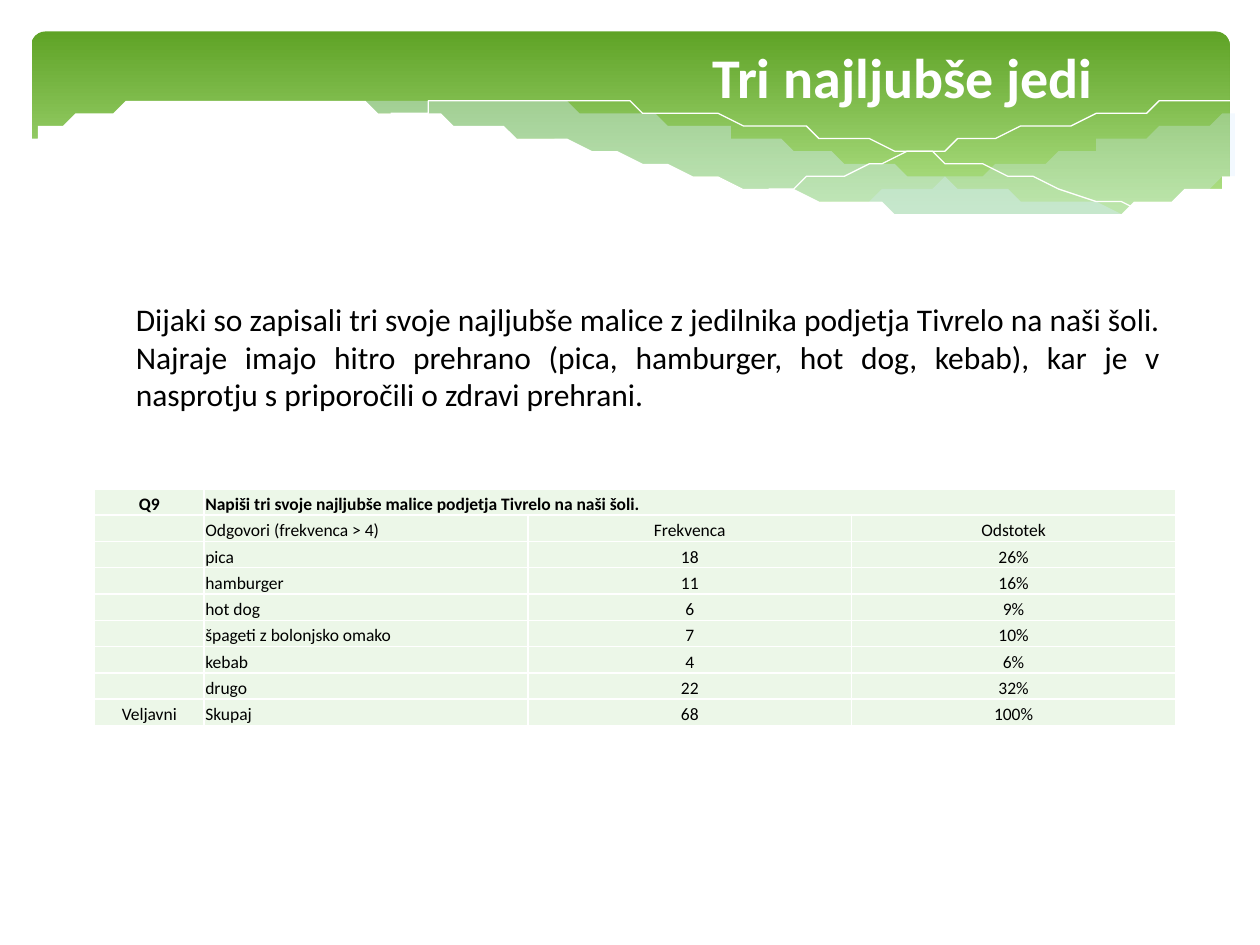
from lxml.etree import SubElement
from pptx import Presentation
from pptx.dml.color import RGBColor
from pptx.enum.shapes import MSO_SHAPE as Shape
from pptx.enum.text import MSO_ANCHOR as Anchor, MSO_AUTO_SIZE as AutoSize, PP_ALIGN as Align
from pptx.oxml.ns import qn
from pptx.util import Inches, Pt

WHITE = RGBColor(0xFF, 0xFF, 0xFF)
BLACK = RGBColor(0, 0, 0)
GREEN = RGBColor(0x5F, 0xA3, 0x26)
LIME = RGBColor(0xB2, 0xE3, 0x89)
VEIL = RGBColor(0xD6, 0xEC, 0xFF)
CELL_FILL = RGBColor(0xEC, 0xF7, 0xE8)

# The slide is a grid of 100 columns by 75 rows of square units
UNIT = Inches(0.1)
COLS, ROWS = 100, 75

# Veils: each is a list of edges, and each edge is a smooth curve
VEILS = [
    (29, [[(97.6, 9.4), (93.5, 10.1), (89.1, 11), (86.1, 11.8), (80.5, 13.1),
           (75.3, 14.3), (70.6, 15.2), (66.1, 16)],
          [(66.1, 16), (70.5, 16.5), (74.5, 16.9), (79.2, 17.2), (83.5, 17.2),
           (87.2, 16.9), (90.5, 16.3), (93.5, 15.6), (97.6, 14.1)]]),
    (40, [[(89.3, 16.7), (83.7, 15.9), (77.5, 14.9), (70.6, 13.4), (62.9, 11.6),
           (58.4, 10.6), (54.1, 9.7), (48.9, 8.9), (44.2, 8.3), (38, 8),
           (34.4, 8), (31.3, 8.2), (28.6, 8.6)],
          [(28.6, 8.6), (34.2, 9.4), (40.4, 10.6), (44.9, 11.6), (53, 13.5),
           (60.1, 15), (66.5, 16.1), (72.2, 16.8), (78.5, 17.2), (82.8, 17.3),
           (86.7, 17), (89.3, 16.7)]]),
]
STRANDS = [
    [(30.9, 9), (34.4, 8.4), (38.7, 8.2), (43.3, 8.2), (48.9, 8.4), (55.6, 9.1),
     (63.6, 10.3), (72.7, 12), (79.5, 13.6), (90.7, 16.6)],
    [(61.3, 15.1), (67.2, 13.5), (74.8, 11.7), (80.6, 10.4), (86.6, 9.3),
     (92.4, 8.4), (97.5, 8)],
]
WAVE = [
    [(97.7, 14.1), (94, 15.4), (89.9, 16.4), (85, 17), (79.3, 17.1), (72.6, 16.7),
     (64.8, 15.6), (55.5, 13.9), (44.7, 11.4), (39.1, 10.2), (34, 9.2), (29.2, 8.5),
     (25, 8.1), (19.3, 7.8), (14.6, 7.9), (10.6, 8.3), (7.6, 8.9), (5.2, 9.6),
     (3.6, 10.2), (2.3, 10.7)],
    [(2.3, 10.7), (2.3, 22.4)],
    [(2.3, 22.4), (97.7, 22.4)],
]

TABLE_ROWS = [
    ("Q9", "Napiši tri svoje najljubše malice podjetja Tivrelo na naši šoli.", "", ""),
    ("", "Odgovori (frekvenca > 4)", "Frekvenca", "Odstotek"),
    ("", "pica", "18", "26%"),
    ("", "hamburger", "11", "16%"),
    ("", "hot dog", "6", "9%"),
    ("", "špageti z bolonjsko omako", "7", "10%"),
    ("", "kebab", "4", "6%"),
    ("", "drugo", "22", "32%"),
    ("Veljavni", "Skupaj", "68", "100%"),
]
BODY = ("Dijaki so zapisali tri svoje najljubše malice z jedilnika podjetja Tivrelo "
        "na naši šoli. Najraje imajo hitro prehrano (pica, hamburger, hot dog, kebab), "
        "kar je v nasprotju s priporočili o zdravi prehrani.")


def grid(*values):
    return [round(v * UNIT) for v in values]


def write(tf, text, align, **font):
    p = tf.paragraphs[0]
    p.alignment = align
    r = p.add_run()
    r.text = text
    color = font.pop("color", BLACK)
    for name, value in {"name": "Calibri", **font}.items():
        setattr(r.font, name, value)
    r.font.color.rgb = color


def smooth(points, steps=5):
    """Catmull-Rom curve through the points."""
    padded = [points[0], *points, points[-1]]
    curve = [points[0]]
    for a, b, c, d in zip(padded, padded[1:], padded[2:], padded[3:]):
        for t in (i / steps for i in range(1, steps + 1)):
            curve.append(tuple(
                (2 * q + (r - p) * t + (2 * p - 5 * q + 4 * r - s) * t ** 2
                 + (3 * q - p - 3 * r + s) * t ** 3) / 2
                for p, q, r, s in zip(a, b, c, d)))
    return curve


def add_curve(slide, edges, closed=True):
    points = [pt for edge in edges for pt in smooth(edge)]
    builder = slide.shapes.build_freeform(*points[0], scale=UNIT)
    builder.add_line_segments(points[1:], close=closed)
    sp = builder.convert_to_shape()
    sp.shadow.inherit = False
    return sp


def add_filled(slide, edges, color, alpha=100):
    sp = add_curve(slide, edges)
    sp.fill.solid()
    sp.fill.fore_color.rgb = color
    sp.line.fill.background()
    if alpha < 100:
        clr = sp._element.spPr.find(".//" + qn("a:srgbClr"))
        SubElement(clr, qn("a:alpha"), val=str(alpha * 1000))


def add_banner(slide, box):
    # Green panel
    panel = slide.shapes.add_shape(Shape.ROUNDED_RECTANGLE, *grid(*box))
    panel.adjustments[0] = 0.07
    panel.shadow.inherit = False
    panel.line.fill.background()
    panel.fill.gradient()
    panel.fill.gradient_angle = 270
    for stop, position, color in zip(panel.fill.gradient_stops, (0, 0.9), (GREEN, LIME)):
        stop.position = position
        stop.color.rgb = color
    # Veils, thin strands and the white wave that cuts the panel
    for alpha, edges in VEILS:
        add_filled(slide, edges, VEIL, alpha)
    for strand in STRANDS:
        sp = add_curve(slide, [strand], closed=False)
        sp.fill.background()
        sp.line.color.rgb = WHITE
        sp.line.width = Pt(0)
    add_filled(slide, WAVE, WHITE)


def place_title(slide, box):
    title = slide.shapes.title
    title.left, title.top, title.width, title.height = grid(*box)
    tf = title.text_frame
    for name, value in {"word_wrap": True, "auto_size": AutoSize.NONE,
                        "vertical_anchor": Anchor.TOP}.items():
        setattr(tf, name, value)
    write(tf, "Tri najljubše jedi", Align.CENTER, size=Pt(32), bold=True, color=WHITE)


def add_body(slide, box):
    tf = slide.shapes.add_textbox(*grid(*box)).text_frame
    tf.word_wrap = True
    write(tf, BODY, Align.JUSTIFY, size=Pt(18))


def format_cell(cell):
    margins = dict.fromkeys(("margin_left", "margin_right", "margin_top"), Inches(0.01))
    for name, value in {**margins, "margin_bottom": 0,
                        "vertical_anchor": Anchor.BOTTOM}.items():
        setattr(cell, name, value)
    tc_pr = cell._tc.get_or_add_tcPr()
    for side in ("lnL", "lnR", "lnT", "lnB"):
        ln = SubElement(tc_pr, qn(f"a:{side}"), w=str(Pt(1)))
        SubElement(SubElement(ln, qn("a:solidFill")), qn("a:srgbClr"), val=str(WHITE))
    cell.fill.solid()
    cell.fill.fore_color.rgb = CELL_FILL


def add_answers(slide, box, first_col):
    n_rows, n_cols = len(TABLE_ROWS), len(TABLE_ROWS[0])
    table = slide.shapes.add_table(n_rows, n_cols, *grid(*box)).table
    other_col = (box[2] - first_col) / (n_cols - 1)
    for i, col in enumerate(table.columns):
        col.width = round((other_col if i else first_col) * UNIT)
    for row in table.rows:
        row.height = round(box[3] / n_rows * UNIT)
    for i, texts in enumerate(TABLE_ROWS):
        for j, text in enumerate(texts):
            cell = table.cell(i, j)
            format_cell(cell)
            if text:
                write(cell.text_frame, text, Align.LEFT if j == 1 else Align.CENTER,
                      size=Pt(10), bold=i == 0)
            else:
                end = cell.text_frame.paragraphs[0]._p.get_or_add_endParaRPr()
                end.set("sz", "1000")
    table.cell(0, 1).merge(table.cell(0, n_cols - 1))


def main():
    prs = Presentation()
    prs.slide_width, prs.slide_height = grid(COLS, ROWS)
    slide = prs.slides.add_slide(prs.slide_layouts[5])
    add_banner(slide, (2.5, 2.5, 95.1, 15.6))
    place_title(slide, (44.5, 2.9, 54.3, 8.7))
    # Bring the title in front of the banner
    slide.shapes._spTree.append(slide.shapes.title._element)
    add_answers(slide, (7.5, 38.8, 85.8, 18.8), first_col=8.7)
    add_body(slide, (9.8, 23.3, 83.3, 10.1))
    prs.save("out.pptx")


if __name__ == "__main__":
    main()
